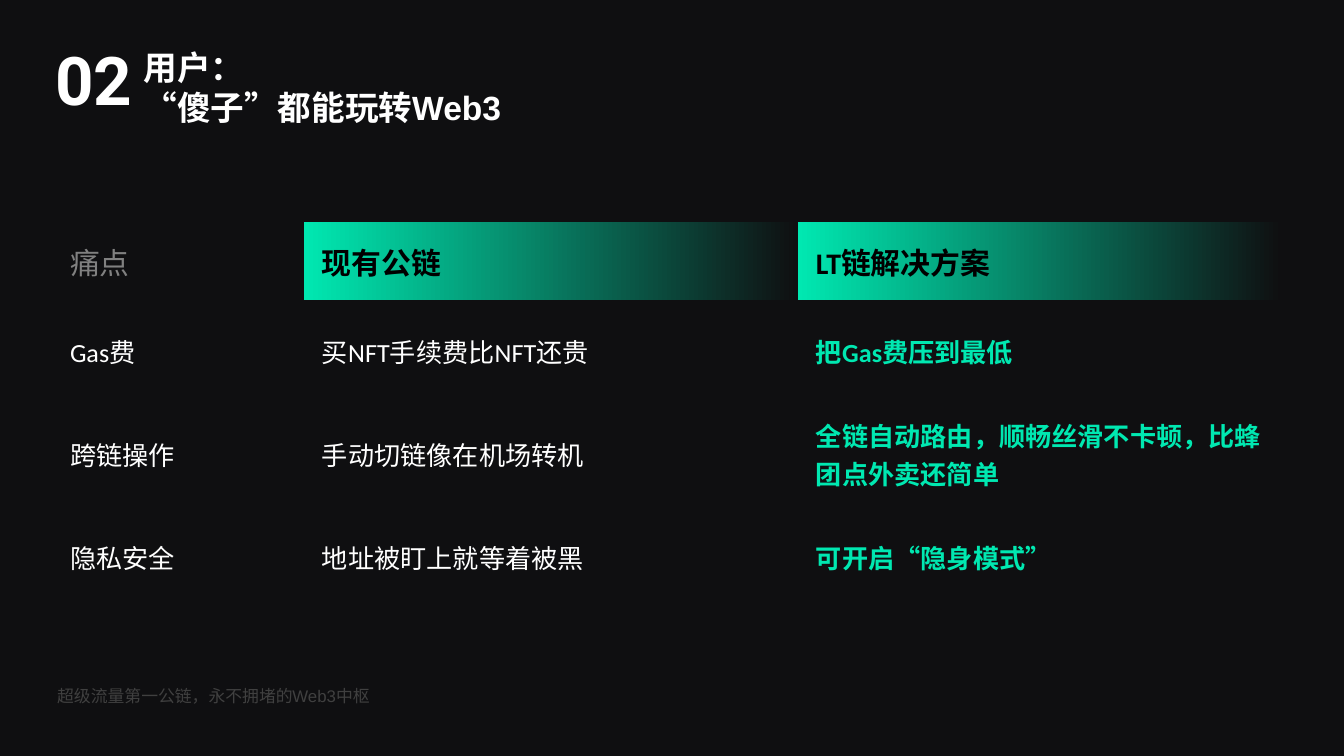
"""Build the slide comparing user pain points on current chains with the LT chain solution."""
from pptx import Presentation
from pptx import util as u
from pptx.dml.color import RGBColor
from pptx.enum import lang, text

BACKGROUND = RGBColor(0x0F, 0x0F, 0x11)
GREEN = RGBColor(0x00, 0xE8, 0xB1)
WHITE = RGBColor(0xFF, 0xFF, 0xFF)
BLACK = RGBColor(0x00, 0x00, 0x00)
GREY = RGBColor(0x80, 0x80, 0x80)
DIM = RGBColor(0x40, 0x40, 0x40)

NUMBER = "02"
TITLE = ["用户：", "“傻子”都能玩转Web3"]
FOOTER = "超级流量第一公链，永不拥堵的Web3中枢"
ROWS = [
    ("痛点", "现有公链", "LT链解决方案"),
    ("Gas费", "买NFT手续费比NFT还贵", "把Gas费压到最低"),
    ("跨链操作", "手动切链像在机场转机", "全链自动路由，顺畅丝滑不卡顿，比蜂团点外卖还简单"),
    ("隐私安全", "地址被盯上就等着被黑", "可开启“隐身模式”"),
]
HEADER_STYLES = [(16, GREY, False), (16, BLACK, True), (16, BLACK, True)]
BODY_STYLES = [(14, WHITE, False), (14, WHITE, False), (14, GREEN, True)]
COLUMN_WIDTHS = [243, 494, 484]
HEADER_HEIGHT, BODY_HEIGHT = 78, 103
PADDING = 9
NO_STYLE = "{2D5ABB26-0587-4C30-8999-92F81FD0307C}"


def px(length):
    return u.Emu(round(length * 914400 / 134.4))


def add_run(paragraph, words, size, font, color, bold=False):
    run = paragraph.add_run()
    run.text = words
    run.font.size = u.Pt(size)
    run.font.name = font
    run.font.bold = bold
    run.font.color.rgb = color
    run.font.language_id = lang.MSO_LANGUAGE_ID.SIMPLIFIED_CHINESE


def write_lines(shape, lines, *style):
    frame = shape.text_frame
    frame.word_wrap = True
    frame.auto_size = text.MSO_AUTO_SIZE.SHAPE_TO_FIT_TEXT
    frame.vertical_anchor = text.MSO_ANCHOR.TOP
    for index, line in enumerate(lines):
        paragraph = frame.add_paragraph() if index else frame.paragraphs[0]
        paragraph.alignment = text.PP_ALIGN.LEFT
        add_run(paragraph, line, *style)


def fill_cell(cell, words, style, is_first, is_banner):
    size, color, bold = style
    cell.vertical_anchor = text.MSO_ANCHOR.MIDDLE
    cell.margin_left = px(0 if is_first else PADDING)
    cell.margin_right = cell.margin_top = cell.margin_bottom = px(PADDING)
    paragraph = cell.text_frame.paragraphs[0]
    paragraph.space_before = paragraph.space_after = u.Pt(5)
    properties = paragraph._p.get_or_add_pPr()
    properties.set("marL", str(px(PADDING)))
    properties.set("indent", "0")
    add_run(paragraph, words, size, "Calibri", color, bold)
    if is_banner:
        cell.fill.gradient()
        cell.fill.gradient_angle = 180
        for stop, shade in zip(cell.fill.gradient_stops, (BACKGROUND, GREEN)):
            stop.color.rgb = shade
    else:
        cell.fill.background()


def add_comparison(slide):
    heights = [HEADER_HEIGHT] + [BODY_HEIGHT] * (len(ROWS) - 1)
    frame = slide.shapes.add_table(
        len(ROWS), len(COLUMN_WIDTHS), px(61), px(222),
        px(sum(COLUMN_WIDTHS)), px(sum(heights)))
    comparison = frame.table
    comparison.first_row = comparison.horz_banding = False
    comparison._tbl.tblPr[0].text = NO_STYLE
    for column, width in zip(comparison.columns, COLUMN_WIDTHS):
        column.width = px(width)
    for r, (row, height) in enumerate(zip(ROWS, heights)):
        comparison.rows[r].height = px(height)
        styles = BODY_STYLES if r else HEADER_STYLES
        for c, (words, style) in enumerate(zip(row, styles)):
            fill_cell(comparison.cell(r, c), words, style, c == 0, r == 0 and c > 0)


def main():
    deck = Presentation()
    deck.slide_width, deck.slide_height = px(1344), px(756)
    slide = deck.slides.add_slide(deck.slide_layouts[5])
    slide.background.fill.solid()
    slide.background.fill.fore_color.rgb = BACKGROUND

    footer = slide.shapes.add_textbox(px(44), px(679), px(1250), px(34))
    write_lines(footer, [FOOTER], 9, "Arial", DIM)
    number = slide.shapes.add_textbox(px(42), px(32), px(108), px(95))
    write_lines(number, [NUMBER], 36, "Roboto", WHITE, True)
    title = slide.shapes.title
    title.left, title.top, title.width, title.height = px(130), px(40), px(1067), px(95)
    write_lines(title, TITLE, 18, "Arial", WHITE, True)
    add_comparison(slide)
    deck.save("out.pptx")


if __name__ == "__main__":
    main()
